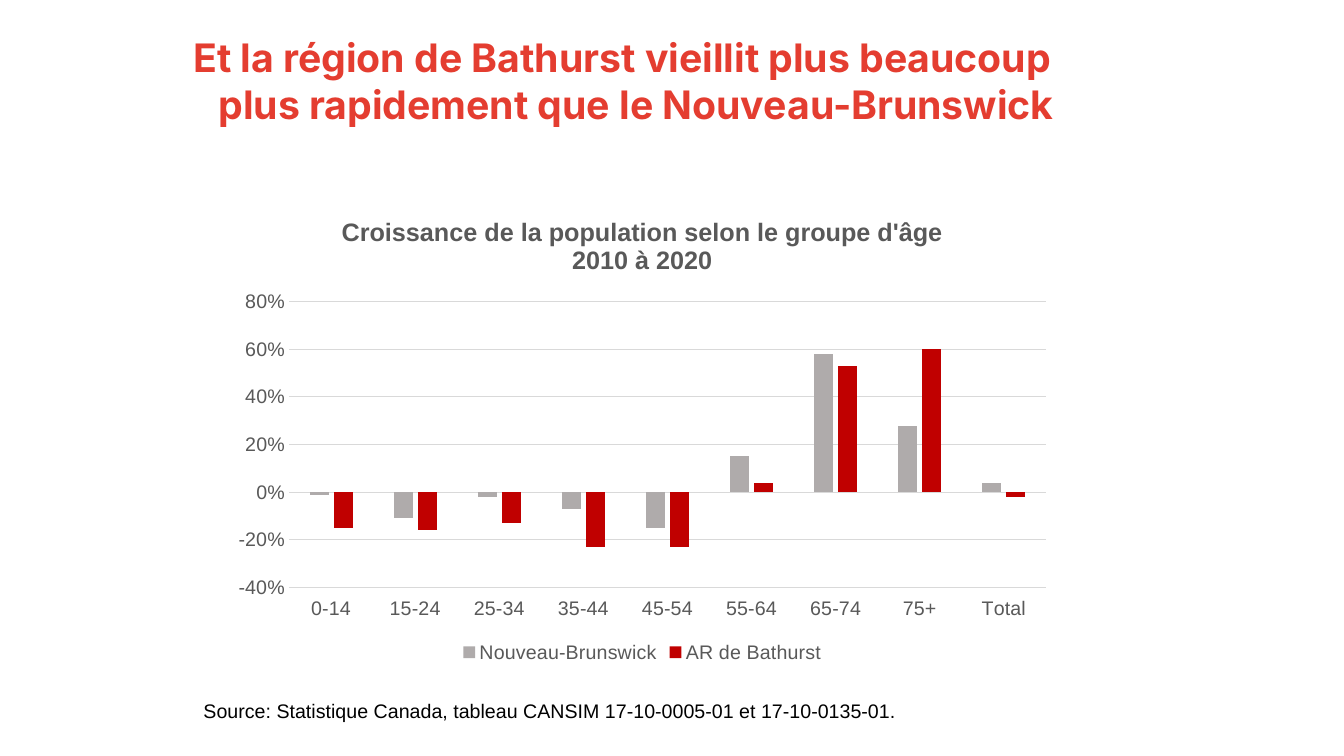
"""Build the slide on population growth by age group in the Bathurst region."""
from dataclasses import dataclass

from lxml import etree
from pptx import Presentation
from pptx import util as u
from pptx.chart import data as chart_data
from pptx.dml.color import RGBColor
from pptx.enum import chart as ch
from pptx.oxml import ns


@dataclass(frozen=True)
class Theme:
    """Colours, fonts and type sizes of the slide."""
    heading: str = "E43D30"
    ink: str = "000000"
    label: str = "595959"
    grid: str = "D9D9D9"
    province: str = "AFABAB"
    region: str = "C00000"
    heading_font: str = "Inter"
    body_font: str = "Arial"
    heading_size: int = 28
    chart_title_size: int = 18
    body_size: int = 14


THEME = Theme()
AGE_GROUPS = ["0-14", "15-24", "25-34", "35-44", "45-54", "55-64", "65-74", "75+", "Total"]
GROWTH = [
    ("Nouveau-Brunswick", THEME.province,
     [-0.01, -0.11, -0.02, -0.07, -0.15, 0.15, 0.58, 0.28, 0.04]),
    ("AR de Bathurst", THEME.region,
     [-0.15, -0.16, -0.13, -0.23, -0.23, 0.04, 0.53, 0.6, -0.02]),
]


def style_font(font, size=THEME.body_size, color=THEME.label, name=THEME.body_font, bold=False):
    """Apply size, colour, typeface and weight to a font."""
    font.size = u.Pt(size)
    font.color.rgb = RGBColor.from_string(color)
    font.name = name
    font.bold = bold


def add_text(page, text, left, top, width, height, margin=0.0, indent=0.0, **style):
    """Add a wrapped text box with one formatted paragraph."""
    box = page.shapes.add_textbox(*map(u.Inches, (left, top, width, height)))
    box.text_frame.word_wrap = True
    para = box.text_frame.paragraphs[0]
    properties = para._p.get_or_add_pPr()
    properties.set("marL", str(u.Inches(margin)))
    properties.set("indent", str(u.Inches(indent)))
    span = para.add_run()
    span.text = text
    style_font(span.font, **style)


def style_line(line):
    """Give a chart line the thin grid look."""
    line.color.rgb = RGBColor.from_string(THEME.grid)
    line.width = u.Pt(0.75)


def add_chart_title(chart, lines):
    """Set the chart title, one paragraph for each line."""
    chart.has_title = True
    frame = chart.chart_title.text_frame
    for index, text in enumerate(lines):
        para = frame.paragraphs[0] if index == 0 else frame.add_paragraph()
        span = para.add_run()
        span.text = text
        style_font(span.font, size=THEME.chart_title_size, bold=True)
    chart.chart_title.include_in_layout = False


def place_plot(chart, **fractions):
    """Fix the inner plot area as fractions of the chart frame."""
    area = chart._chartSpace.chart.plotArea
    for old in area.findall(ns.qn("c:layout")):
        area.remove(old)
    layout = etree.Element(ns.qn("c:layout"))
    manual = etree.SubElement(layout, ns.qn("c:manualLayout"))
    settings = {"layoutTarget": "inner", "xMode": "edge", "yMode": "edge", **fractions}
    for tag, value in settings.items():
        etree.SubElement(manual, ns.qn(f"c:{tag}")).set("val", str(value))
    area.insert(0, layout)


def style_axes(chart):
    """Format the age axis and the percentage axis."""
    for axis in (chart.category_axis, chart.value_axis):
        axis.major_tick_mark = axis.minor_tick_mark = ch.XL_TICK_MARK.NONE
        style_font(axis.tick_labels.font)
    chart.category_axis.tick_label_position = ch.XL_TICK_LABEL_POSITION.LOW
    style_line(chart.category_axis.format.line)
    values = chart.value_axis
    values.minimum_scale, values.maximum_scale, values.major_unit = -0.4, 0.8, 0.2
    values.tick_labels.number_format = "0%"
    values.tick_labels.number_format_is_linked = False
    values.format.line.fill.background()
    values.has_major_gridlines = True
    style_line(values.major_gridlines.format.line)


def add_growth_chart(page, left, top, width, height):
    """Add the clustered columns comparing province and region."""
    data = chart_data.CategoryChartData(number_format="0%")
    data.categories = AGE_GROUPS
    for name, _, values in GROWTH:
        data.add_series(name, values)
    chart = page.shapes.add_chart(
        ch.XL_CHART_TYPE.COLUMN_CLUSTERED,
        *map(u.Inches, (left, top, width, height)), data).chart
    style_font(chart.font, size=10, color=THEME.ink)
    add_chart_title(chart, ["Croissance de la population selon le groupe d'âge", "2010 à 2020"])
    style_axes(chart)
    place_plot(chart, x=0.08, y=0.22, w=0.9, h=0.61)
    plot = chart.plots[0]
    plot.vary_by_categories = False
    plot.gap_width, plot.overlap = 219, -27
    for series, (_, color, _) in zip(plot.series, GROWTH):
        series.invert_if_negative = False
        series.format.fill.solid()
        series.format.fill.fore_color.rgb = RGBColor.from_string(color)
    chart.has_legend = True
    chart.legend.position = ch.XL_LEGEND_POSITION.BOTTOM
    chart.legend.include_in_layout = False
    style_font(chart.legend.font)


def main():
    """Build and save the slide."""
    deck = Presentation()
    deck.slide_width, deck.slide_height = u.Inches(13.33), u.Inches(7.5)
    page = deck.slides.add_slide(deck.slide_layouts[6])
    add_text(page, "Et la région de Bathurst vieillit plus beaucoup plus rapidement "
             "que le Nouveau-Brunswick", 1.57, 0.28, 9.71, 1.55, margin=0.5, indent=-0.25,
             size=THEME.heading_size, color=THEME.heading, name=THEME.heading_font, bold=True)
    add_growth_chart(page, 2.2, 1.97, 8.34, 4.65)
    add_text(page, "Source: Statistique Canada, tableau CANSIM 17-10-0005-01 et 17-10-0135-01.",
             1.92, 6.88, 9.36, 0.34, color=THEME.ink)
    deck.save("out.pptx")


if __name__ == "__main__":
    main()
